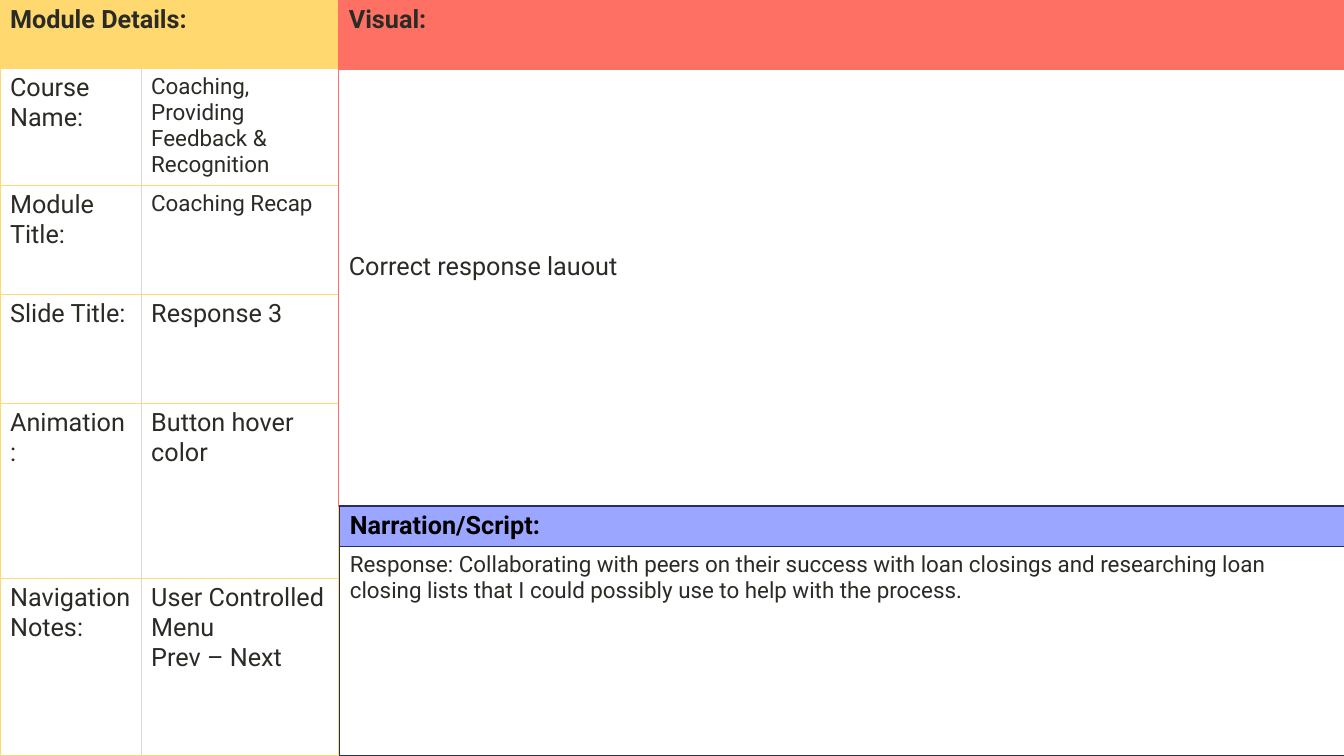
from lxml import etree
from pptx import Presentation
from pptx import util as u
from pptx.dml.color import RGBColor
from pptx.oxml.ns import qn

COLORS = {
    "page": "F9F9F9", "white": "FFFFFF", "ink": "2B2B26", "black": "000000",
    "details": "FFD96F", "visual": "FF7064", "narration": "9AA6FF",
    "navy": "233060", "divider": "D9D9D9",
}


class Storyboard:
    """Holds the style and the current slide."""

    font = "Roboto"

    def __init__(self, slide):
        self.slide = slide
        background = slide.background.fill
        background.solid()
        background.fore_color.rgb = self.color("page")

    def color(self, name):
        return RGBColor.from_string(COLORS[name])

    def table(self, left, top, columns, rows):
        frame = self.slide.shapes.add_table(
            len(rows), len(columns), u.Inches(left), u.Inches(top),
            u.Inches(sum(columns)), u.Inches(sum(rows)))
        table = frame.table
        table.first_row = table.horz_banding = False
        for column, width in zip(table.columns, columns):
            column.width = u.Inches(width)
        for row, height in zip(table.rows, rows):
            row.height = u.Inches(height)
        return table

    def cell(self, cell, content, fill, border, size=18, bold=False,
             ink="ink", **side_borders):
        cell.fill.solid()
        cell.fill.fore_color.rgb = self.color(fill)
        self.borders(cell, border, side_borders)
        frame = cell.text_frame
        for index, line in enumerate(content.split("\n") if content else []):
            paragraph = frame.add_paragraph() if index else frame.paragraphs[0]
            run = paragraph.add_run()
            run.text = line
            run.font.name = self.font
            run.font.size = u.Pt(size)
            run.font.bold = bold
            run.font.color.rgb = self.color(ink)

    def borders(self, cell, border, side_borders):
        properties = cell._tc.get_or_add_tcPr()
        for index, side in enumerate("LRTB"):
            line = etree.Element(qn(f"a:ln{side}"), w=str(u.Pt(1)))
            solid = etree.SubElement(line, qn("a:solidFill"))
            name = side_borders.get(side, border)
            etree.SubElement(solid, qn("a:srgbClr"), val=COLORS[name])
            properties.insert(index, line)


def main():
    deck = Presentation()
    deck.slide_width, deck.slide_height = u.Inches(13.33), u.Inches(7.5)
    board = Storyboard(deck.slides.add_slide(deck.slide_layouts[6]))

    # Module details: merged heading, then label and value rows
    details = [
        ("Course Name:", "Coaching, Providing Feedback & Recognition", 16),
        ("Module Title:", "Coaching Recap", 16),
        ("Slide Title:", "Response 3", 18),
        ("Animation:", "Button hover color", 18),
        ("Navigation Notes:", "User Controlled\nMenu\nPrev – Next", 18),
    ]
    module = board.table(0, 0, [1.4, 1.96],
                         [0.68, 1.16, 1.08, 1.08, 1.74, 1.76])
    module.cell(0, 0).merge(module.cell(0, 1))
    for column, heading in enumerate(["Module Details:", ""]):
        board.cell(module.cell(0, column), heading, "details", "details",
                   bold=True)
    for row, (label, value, size) in enumerate(details, start=1):
        board.cell(module.cell(row, 0), label, "white", "details", R="divider")
        board.cell(module.cell(row, 1), value, "white", "details", size,
                   L="divider")

    # Visual
    visual = board.table(3.36, 0, [9.98], [0.69, 4.33])
    board.cell(visual.cell(0, 0), "Visual:", "visual", "visual", bold=True)
    layout_note = visual.cell(1, 0)
    board.cell(layout_note, "Correct response lauout", "white", "visual")
    layout_note.margin_top = u.Inches(1.81)

    # Narration heading and script
    narration = board.table(3.37, 5.02, [9.98], [0.4])
    board.cell(narration.cell(0, 0), "Narration/Script:", "narration", "navy",
               bold=True, ink="black")
    script = board.table(3.37, 5.42, [9.98], [2.08])
    board.cell(script.cell(0, 0),
               "Response: Collaborating with peers on their success with loan "
               "closings and researching loan closing lists that I could "
               "possibly use to help with the process.",
               "white", "navy", size=16)

    deck.save("out.pptx")


if __name__ == "__main__":
    main()
